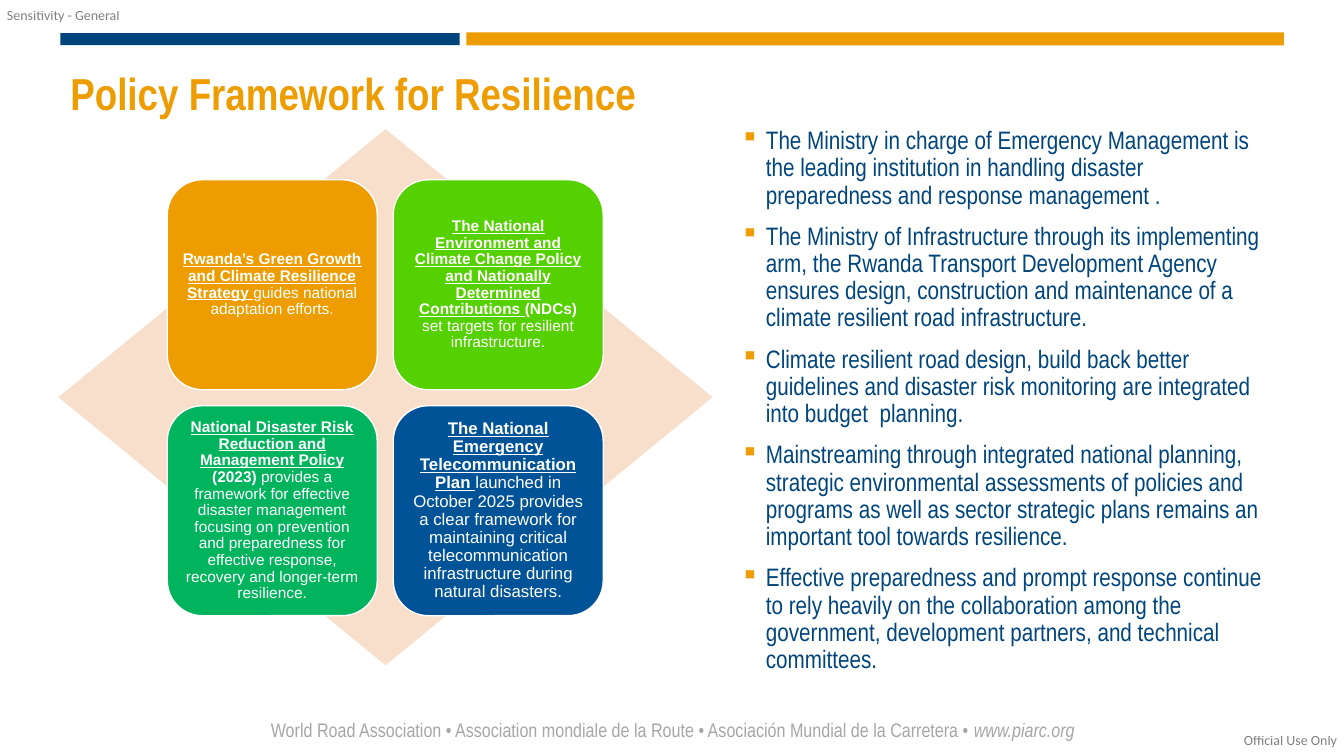
from dataclasses import dataclass

from lxml import etree
from pptx import Presentation
from pptx import util as u
from pptx.dml.color import RGBColor
from pptx.enum import shapes, text
from pptx.oxml.ns import qn

Pt = u.Pt
COLORS = {
    "navy": "00457C", "orange": "ED9D00", "peach": "F8DFCC", "lime": "55D000",
    "green": "00B35D", "blue": "005396", "white": "FFFFFF", "grey": "A6A6A6",
    "black": "000000",
}
NARROW = "Arial Narrow"
CARD_SIZE, CARD_PITCH = 150, 161.4
CARDS_LEFT, CARDS_TOP = 119.5, 128.4


@dataclass
class Box:
    left: float
    top: float
    width: float
    height: float

    def lengths(self) -> list:
        return [Pt(v) for v in (self.left, self.top, self.width, self.height)]


@dataclass
class Style:
    size: float
    color: str
    font: str = NARROW
    bold: bool = False
    italic: bool = False
    underline: bool = False


@dataclass
class Card:
    color: str
    size: float
    name: str
    rest: str
    abbreviation: str = ""


CARDS = [
    Card("orange", 11, "Rwanda’s Green Growth and Climate Resilience Strategy ",
         "guides national adaptation efforts."),
    Card("lime", 11, "The National Environment and Climate Change Policy and "
         "Nationally Determined Contributions ",
         " set targets for resilient infrastructure.", "(NDCs)"),
    Card("green", 11, "National Disaster Risk Reduction and Management Policy ",
         "provides a framework for effective disaster management focusing on "
         "prevention and preparedness for effective response, recovery and "
         "longer-term resilience.", "(2023) "),
    Card("blue", 12, "The National Emergency Telecommunication Plan ",
         "launched in October 2025 provides a clear framework for maintaining "
         "critical telecommunication infrastructure during natural disasters."),
]
POINTS = [
    "The Ministry in charge of Emergency Management is the leading institution "
    "in handling disaster preparedness and response management .",
    "The Ministry of Infrastructure through its implementing arm, the Rwanda "
    "Transport Development Agency ensures design, construction and maintenance "
    "of a climate resilient road infrastructure.",
    "Climate resilient road design, build back better guidelines and disaster "
    "risk monitoring are integrated into budget  planning.",
    "Mainstreaming through integrated national planning, strategic environmental "
    "assessments of policies and programs as well as sector strategic plans "
    "remains an important tool towards resilience.",
    "Effective preparedness and prompt response continue to rely heavily on the "
    "collaboration among the government, development partners, and technical "
    "committees.",
]
LABELS = [
    ("Sensitivity - General", Box(5, 5, 83, 12)),
    ("Official Use Only", Box(888.5, 522.7, 69, 12)),
]


def rgb(name: str) -> RGBColor:
    return RGBColor.from_string(COLORS[name])


def add_filled(slide, kind, box: Box, color: str):
    shape = slide.shapes.add_shape(kind, *box.lengths())
    shape.shadow.inherit = False
    shape.fill.solid()
    shape.fill.fore_color.rgb = rgb(color)
    shape.line.fill.background()
    return shape


def add_frame(slide, box: Box, wrap: bool = True):
    frame = slide.shapes.add_textbox(*box.lengths()).text_frame
    frame.word_wrap = wrap
    return frame


def set_insets(frame, inset: float) -> None:
    frame.margin_left = frame.margin_right = Pt(inset)
    frame.margin_top = frame.margin_bottom = Pt(inset)


def add_words(paragraph, words: str, style: Style):
    run = paragraph.add_run()
    run.text = words
    font = run.font
    font.name, font.size = style.font, Pt(style.size)
    font.bold, font.italic = style.bold, style.italic
    font.underline = style.underline
    font.color.rgb = rgb(style.color)
    return run


def add_bullet(paragraph, color: str) -> None:
    properties = paragraph._p.get_or_add_pPr()
    properties.set("marL", str(Pt(18)))
    properties.set("indent", str(-Pt(18)))
    bullet_color = etree.SubElement(properties, qn("a:buClr"))
    etree.SubElement(bullet_color, qn("a:srgbClr"), val=COLORS[color])
    etree.SubElement(properties, qn("a:buChar"), char="▪")


def add_card(slide, card: Card, column: int, row: int) -> None:
    box = Box(CARDS_LEFT + column * CARD_PITCH, CARDS_TOP + row * CARD_PITCH,
              CARD_SIZE, CARD_SIZE)
    shape = add_filled(slide, shapes.MSO_SHAPE.ROUNDED_RECTANGLE, box, card.color)
    shape.line.color.rgb = rgb("white")
    shape.line.width = Pt(1)
    frame = shape.text_frame
    frame.word_wrap = True
    frame.vertical_anchor = text.MSO_ANCHOR.MIDDLE
    set_insets(frame, 3.6)
    paragraph = frame.paragraphs[0]
    paragraph.alignment = text.PP_ALIGN.CENTER
    paragraph.line_spacing = 0.9
    add_words(paragraph, card.name,
              Style(card.size, "white", "Arial", bold=True, underline=True))
    if card.abbreviation:
        add_words(paragraph, card.abbreviation,
                  Style(card.size, "white", "Arial", bold=True))
    add_words(paragraph, card.rest, Style(card.size, "white", "Arial"))


def add_points(slide) -> None:
    frame = add_frame(slide, Box(522, 87.8, 394.6, 404))
    for index, point in enumerate(POINTS):
        paragraph = frame.add_paragraph() if index else frame.paragraphs[0]
        paragraph.line_spacing = 0.9
        if index:
            paragraph.space_before = Pt(10)
        add_bullet(paragraph, "orange")
        add_words(paragraph, point, Style(18, "navy"))


def add_label(slide, words: str, box: Box) -> None:
    """Add a half-transparent marking in a corner of the slide."""
    frame = add_frame(slide, box, wrap=False)
    set_insets(frame, 0)
    run = add_words(frame.paragraphs[0], words, Style(10, "black", "Calibri"))
    for color in run._r.iter(qn("a:srgbClr")):
        etree.SubElement(color, qn("a:alpha"), val="50000")


def main() -> None:
    deck = Presentation()
    deck.slide_width, deck.slide_height = Pt(960), Pt(540)
    slide = deck.slides.add_slide(deck.slide_layouts[6])

    rectangle = shapes.MSO_SHAPE.RECTANGLE
    add_filled(slide, rectangle, Box(43.2, 23.6, 285.1, 8.6), "navy")
    add_filled(slide, rectangle, Box(333.2, 23.1, 584, 9.3), "orange")

    footer = add_frame(slide, Box(43.9, 509, 873.4, 24.5)).paragraphs[0]
    footer.alignment = text.PP_ALIGN.CENTER
    add_words(footer, "World Road Association • Association mondiale de la Route • "
              "Asociación Mundial de la Carretera • ", Style(14, "grey"))
    add_words(footer, "www.piarc.org", Style(14, "grey", italic=True))
    for words, box in LABELS:
        add_label(slide, words, box)

    title = add_frame(slide, Box(43.2, 47.5, 874, 104.4)).paragraphs[0]
    title.line_spacing = 0.9
    add_words(title, "Policy Framework for Resilience",
              Style(32, "orange", bold=True))

    add_filled(slide, shapes.MSO_SHAPE.DIAMOND, Box(41.8, 92.2, 467.2, 383), "peach")
    for index, card in enumerate(CARDS):
        add_card(slide, card, column=index % 2, row=index // 2)
    add_points(slide)
    deck.save("out.pptx")


if __name__ == "__main__":
    main()
